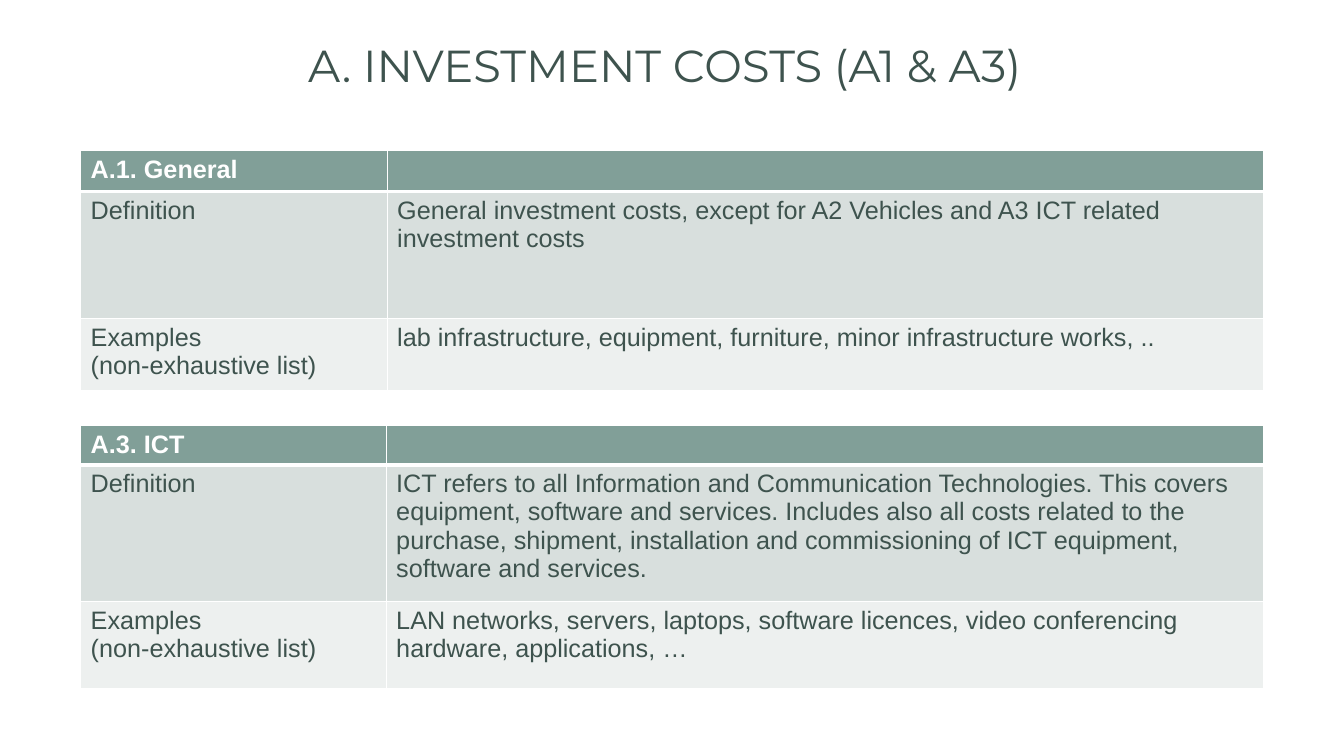
from lxml import etree
from pptx import Presentation
from pptx import util as u
from pptx.dml import color
from pptx.enum import text
from pptx.oxml import ns

INK, WHITE = "3E534E", "FFFFFF"
FILLS = ["819F98", "D8DFDD", "EDF0EF"]
LABEL = "Examples\n(non-exhaustive list)"
GENERAL = [
    ["A.1. General", ""],
    ["Definition", "General investment costs, except for A2 Vehicles and A3 ICT "
     "related investment costs"],
    [LABEL, "lab infrastructure, equipment, furniture, minor infrastructure works, .."],
]
ICT = [
    ["A.3. ICT", ""],
    ["Definition", "ICT refers to all Information and Communication Technologies. "
     "This covers equipment, software and services. Includes also all costs related "
     "to the purchase, shipment, installation and commissioning of ICT equipment, "
     "software and services."],
    [LABEL, "LAN networks, servers, laptops, software licences, video conferencing "
     "hardware, applications, …"],
]


def px(n):
    return u.Emu(n * 9144)


def rgb(code):
    return color.RGBColor.from_string(code)


def add_run(par, words, face, size, ink, bold=False):
    run = par.add_run()
    run.text = words
    font = run.font
    font.name, font.size, font.bold = face, u.Pt(size), bold
    font.color.rgb = rgb(ink)


def add_title(slide, words):
    title = slide.shapes.title
    title.left, title.top, title.width, title.height = map(px, (202, 38, 915, 127))
    frame = title.text_frame
    frame.word_wrap = True
    frame.auto_size = text.MSO_AUTO_SIZE.NONE
    frame.vertical_anchor = text.MSO_ANCHOR.TOP
    par = frame.paragraphs[0]
    par.alignment = text.PP_ALIGN.CENTER
    par.line_spacing = 0.9
    par.space_before = u.Pt(10)
    add_run(par, words, "Montserrat", 32, INK)


def add_edge(cell, side, width):
    props = cell._tc.get_or_add_tcPr()
    line = etree.SubElement(props, ns.qn(f"a:ln{side}"), w=str(u.Pt(width)))
    fill = etree.SubElement(line, ns.qn("a:solidFill"))
    etree.SubElement(fill, ns.qn("a:srgbClr"), val=WHITE)


def fill_cell(cell, words, row):
    head = row == 0
    for side, width in zip("LRTB", (1, 1, 3 if row == 1 else 1, 3 if head else 1)):
        add_edge(cell, side, width)
    cell.fill.solid()
    cell.fill.fore_color.rgb = rgb(FILLS[row])
    frame = cell.text_frame
    if not words:
        etree.SubElement(frame.paragraphs[0]._p, ns.qn("a:endParaRPr"), sz="1600")
        return
    for i, part in enumerate(words.split("\n")):
        par = frame.add_paragraph() if i else frame.paragraphs[0]
        add_run(par, part, "Arial", 18, WHITE if head else INK, head)


def add_grid(slide, top, cols, rows, data):
    box = (80, top, sum(cols), sum(rows))
    grid = slide.shapes.add_table(len(rows), len(cols), *map(px, box)).table
    for col, width in zip(grid.columns, cols):
        col.width = px(width)
    for r, height in enumerate(rows):
        grid.rows[r].height = px(height)
        for c, words in enumerate(data[r]):
            fill_cell(grid.cell(r, c), words, r)


def main():
    deck = Presentation()
    deck.slide_width, deck.slide_height = px(1333), px(750)
    slide = deck.slides.add_slide(deck.slide_layouts[5])
    add_title(slide, "A. INVESTMENT COSTS (A1 & A3)")
    add_grid(slide, 149, [304, 869], [41, 126, 72], GENERAL)
    add_grid(slide, 422, [303, 870], [39, 136, 86], ICT)
    deck.save("out.pptx")


if __name__ == "__main__":
    main()
